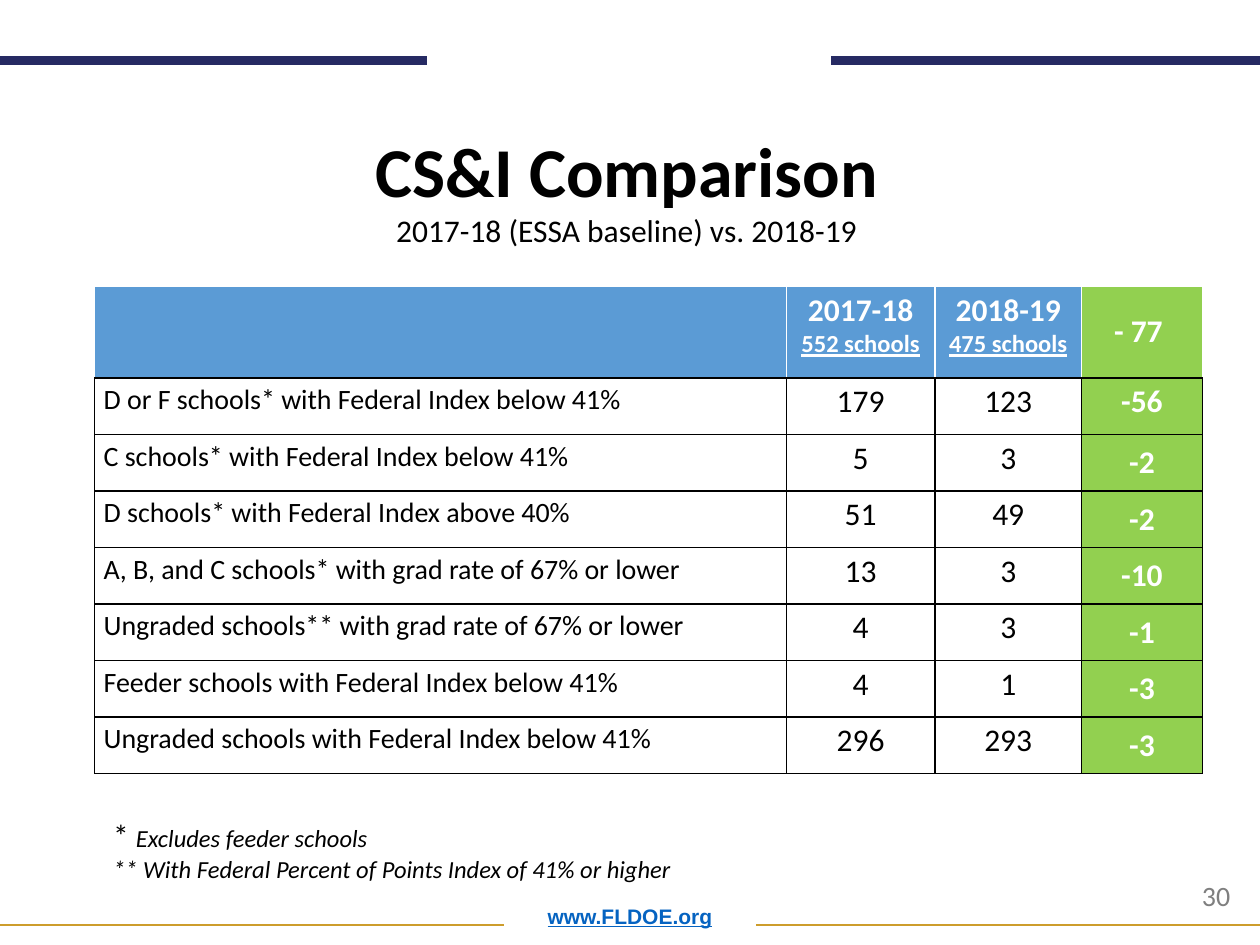
from lxml import etree
from pptx import Presentation
from pptx.dml.color import RGBColor
from pptx.enum.shapes import MSO_CONNECTOR
from pptx.enum.text import MSO_ANCHOR, MSO_AUTO_SIZE, PP_ALIGN
from pptx.oxml.ns import qn
from pptx.util import Cm, Pt

STRAIGHT = MSO_CONNECTOR.STRAIGHT
LEFT, CENTER = PP_ALIGN.LEFT, PP_ALIGN.CENTER
TOP, MIDDLE, BOTTOM = MSO_ANCHOR.TOP, MSO_ANCHOR.MIDDLE, MSO_ANCHOR.BOTTOM
FIT_SHAPE = MSO_AUTO_SIZE.SHAPE_TO_FIT_TEXT
NAVY, GOLD, BLUE, GREEN = "262A63", "CD9D2C", "5B9BD5", "92D050"
WHITE, BLACK, GRAY, LINK = "FFFFFF", "000000", "7F7F7F", "0563C1"


def rgb(color):
    return RGBColor.from_string(color)


def write(frame, text, size=18, color=BLACK, bold=False, italic=False,
          underline=False, font="Calibri", align=LEFT, same_line=False):
    """Add text to a frame, on a new line unless the frame is empty."""
    paragraph = frame.paragraphs[-1]
    if paragraph.runs and not same_line:
        paragraph = frame.add_paragraph()
    paragraph.alignment = align
    run = paragraph.add_run()
    run.text = text
    run.font.name, run.font.size = font, Pt(size)
    run.font.bold, run.font.italic, run.font.underline = bold, italic, underline
    run.font.color.rgb = rgb(color)
    return paragraph


prs = Presentation()
prs.slide_width, prs.slide_height = Cm(25.4), Cm(19.05)
slide = prs.slides.add_slide(prs.slide_layouts[6])
shapes = slide.shapes

# Rules at the top and bottom edges
for start, end, y, color, weight in [
    (0, 10.16, 18.64, GOLD, 1),
    (15.24, 25.4, 18.64, GOLD, 1),
    (0, 8.61, 1.22, NAVY, 5),
    (16.76, 25.4, 1.22, NAVY, 5),
]:
    rule = shapes.add_connector(STRAIGHT, Cm(start), Cm(y), Cm(end), Cm(y))
    rule.line.color.rgb = rgb(color)
    rule.line.width = Pt(weight)
    etree.SubElement(rule._element.spPr, qn("a:effectLst"))

# Web address and page number
website = shapes.add_textbox(Cm(1.75), Cm(17.78), Cm(21.9), Cm(1.07)).text_frame
website.word_wrap = True
website.vertical_anchor = BOTTOM
address = write(website, "www.FLDOE.org", size=12, color=LINK, bold=True,
                underline=True, font="Arial", align=CENTER)
address.line_spacing = 0.9

page_number = shapes.add_textbox(Cm(23.98), Cm(17.58), Cm(1.32), Cm(0.94)).text_frame
page_number.word_wrap = True
page_number.auto_size = FIT_SHAPE
write(page_number, "30", size=16, color=GRAY)

# Comparison table
headings = [(), ("2017-18", "552 schools"), ("2018-19", "475 schools"), ("- 77 ",)]
categories = [
    ("D or F schools* with Federal Index below 41%", "179", "123", "-56"),
    ("C schools* with Federal Index below 41%", "5", "3", "-2"),
    ("D schools* with Federal Index above 40%", "51", "49", "-2"),
    ("A, B, and C schools* with grad rate of 67% or lower", "13", "3", "-10"),
    ("Ungraded schools** with grad rate of 67% or lower", "4", "3", "-1"),
    ("Feeder schools with Federal Index below 41%", "4", "1", "-3"),
    ("Ungraded schools with Federal Index below 41%", "296", "293", "-3"),
]
comparison = shapes.add_table(len(categories) + 1, len(headings),
                              Cm(1.91), Cm(5.77), Cm(22.33), Cm(9.83)).table
comparison.horz_banding = False
for column, width in zip(comparison.columns, (13.94, 3.0, 2.95, 2.44)):
    column.width = Cm(width)
for row_number, row in enumerate(comparison.rows):
    row.height = Cm(1.14 if row_number else 1.85)

CHANGE = len(headings) - 1
for row_number, row in enumerate(comparison.rows):
    is_heading = row_number == 0
    for column_number, cell in enumerate(row.cells):
        is_change = column_number == CHANGE
        cell.margin_left = cell.margin_right = Cm(0.18)
        cell.margin_top = cell.margin_bottom = Cm(0.1)
        cell.vertical_anchor = MIDDLE if is_change and row_number != 1 else TOP

        # Borders come before the fill in the cell properties
        for side in ("lnL", "lnR", "lnT", "lnB"):
            border = etree.SubElement(cell._tc.get_or_add_tcPr(), qn(f"a:{side}"),
                                      w=str(Pt(1)))
            line_fill = etree.SubElement(border, qn("a:solidFill"))
            line_color = WHITE if is_heading and side != "lnB" else BLACK
            etree.SubElement(line_fill, qn("a:srgbClr"), val=line_color)
        cell.fill.solid()
        cell.fill.fore_color.rgb = rgb(
            GREEN if is_change else BLUE if is_heading else WHITE)

        if is_heading:
            for line_number, text in enumerate(headings[column_number]):
                write(cell.text_frame, text, size=14 if line_number else 18,
                      color=WHITE, bold=True, underline=line_number > 0, align=CENTER)
        else:
            write(cell.text_frame, categories[row_number - 1][column_number],
                  size=18 if column_number else 16,
                  color=WHITE if is_change else BLACK, bold=is_change,
                  align=CENTER if column_number else LEFT)

# Title and subtitle
title = shapes.add_textbox(Cm(7.16), Cm(2.44), Cm(10.95), Cm(2.82)).text_frame
title.word_wrap = False
title.auto_size = FIT_SHAPE
write(title, "CS&I Comparison", size=40, bold=True, align=CENTER)
write(title, "2017-18 (ESSA baseline) vs. 2018-19", align=CENTER)

# Footnotes
footnotes = shapes.add_textbox(Cm(2.03), Cm(16.33), Cm(21.23), Cm(1.63)).text_frame
footnotes.word_wrap = True
footnotes.auto_size = FIT_SHAPE
write(footnotes, "* ")
write(footnotes, "Excludes feeder schools", size=14, italic=True, same_line=True)
write(footnotes, "** With Federal Percent of Points Index of 41% or higher",
      size=14, italic=True)

prs.save("out.pptx")
